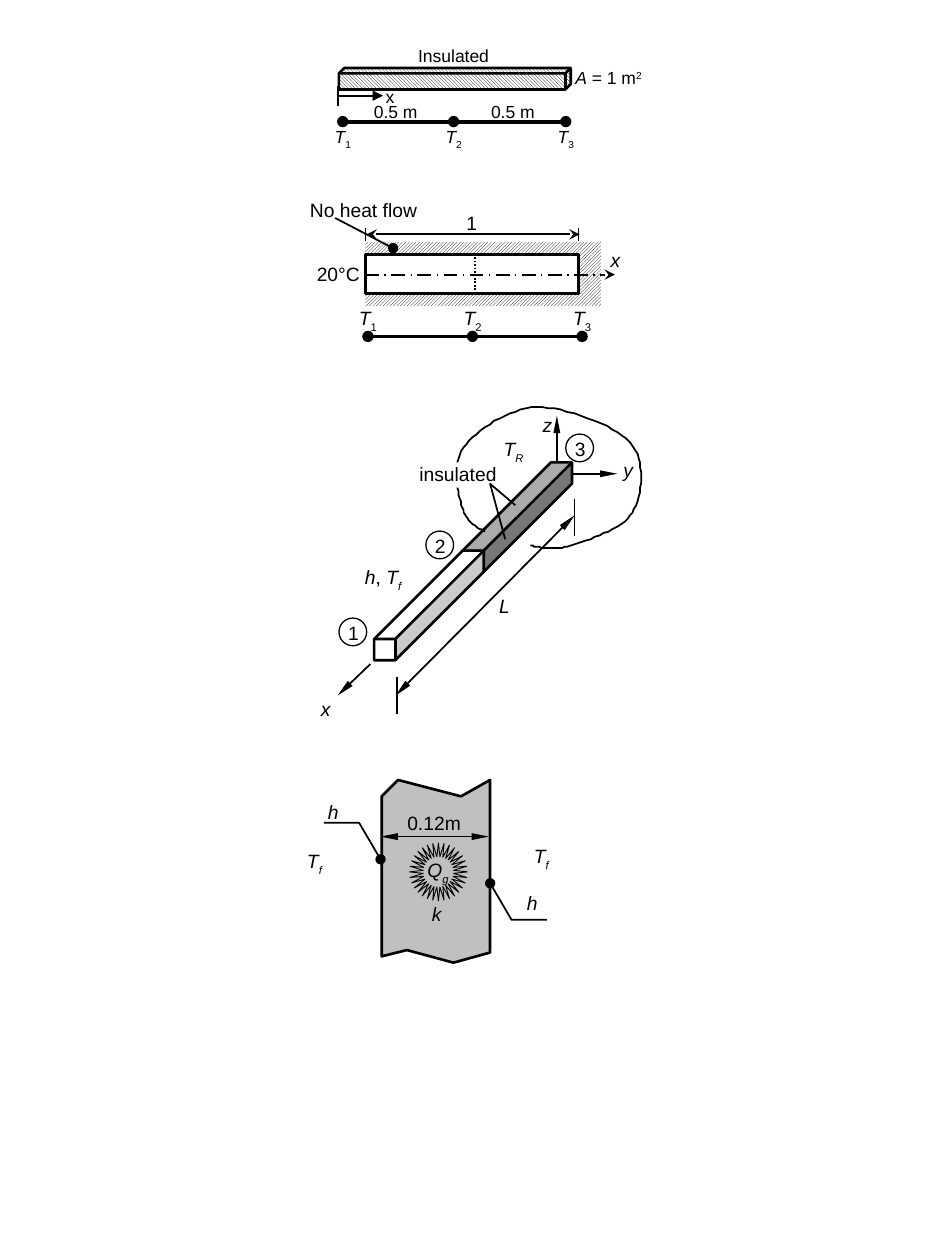
import dataclasses
import typing

import lxml.etree
import pptx
import pptx.dml.color
import pptx.enum.dml
import pptx.enum.shapes
import pptx.enum.text
import pptx.oxml.ns
import pptx.util

Color = pptx.dml.color.RGBColor
Kind = pptx.enum.shapes.MSO_SHAPE
Pattern = pptx.enum.dml.MSO_PATTERN
Dash = pptx.enum.dml.MSO_LINE
Canvas = typing.Any
Point = tuple[float, float]

COLUMNS, ROWS = 750, 1000
CELL = pptx.util.Inches(7.5) // COLUMNS


@dataclasses.dataclass(frozen=True)
class Theme:
    ink: Color = Color(0, 0, 0)
    paper: Color = Color(255, 255, 255)
    shade: Color = Color(0x96, 0x96, 0x96)
    wall: Color = Color(0xC0, 0xC0, 0xC0)
    font: str = "Arial"
    small: float = 10
    normal: float = 11
    fine: float = 0.75
    thin: float = 1
    bold: float = 1.5


THEME = Theme()


class Place(typing.NamedTuple):
    left: float
    top: float
    width: float
    height: float


class Span(typing.NamedTuple):
    text: str
    italic: bool = False
    baseline: int = 0


class Ends(typing.NamedTuple):
    head: str = ""
    tail: str = ""
    width: str = "med"
    length: str = "med"


SLIM = Ends(tail="triangle", width="sm", length="lg")
SLIM_BOTH = SLIM._replace(head="triangle")
STEALTH = Ends(tail="stealth")
DOT = Ends(tail="oval")


def cells(*values: float) -> list[int]:
    return [round(value * CELL) for value in values]


def symbol(letter: str, index: str, italic: bool = False) -> list[Span]:
    return [Span(letter, True), Span(index, italic, -30000)]


def write(canvas: Canvas, text: str | list[Span], place: Place, *,
          size: float = THEME.normal, italic: bool = False,
          fill: Color | None = None) -> None:
    box = canvas.add_textbox(*cells(*place))
    if fill is not None:
        box.fill.solid()
        box.fill.fore_color.rgb = fill
    frame = box.text_frame
    frame.word_wrap = True
    frame.vertical_anchor = pptx.enum.text.MSO_ANCHOR.TOP
    frame.margin_left = frame.margin_right = frame.margin_top = frame.margin_bottom = 0
    para = frame.paragraphs[0]
    para.alignment = pptx.enum.text.PP_ALIGN.CENTER
    for span in [Span(text, italic)] if isinstance(text, str) else text:
        run = para.add_run()
        run.text = span.text
        run.font.name, run.font.size = THEME.font, pptx.util.Pt(size)
        run.font.italic = span.italic
        run.font.color.rgb = THEME.ink
        if span.baseline:
            run.font._element.set("baseline", str(span.baseline))


def outline(item: typing.Any, weight: float, ends: Ends = Ends(), dash: typing.Any = None) -> None:
    item.line.color.rgb = THEME.ink
    item.line.width = pptx.util.Pt(weight)
    if dash is not None:
        item.line.dash_style = dash
    stroke = item._element.spPr.find(pptx.oxml.ns.qn("a:ln"))
    for tag, kind in (("a:headEnd", ends.head), ("a:tailEnd", ends.tail)):
        if kind:
            lxml.etree.SubElement(stroke, pptx.oxml.ns.qn(tag), type=kind, w=ends.width, len=ends.length)


def paint(item: typing.Any, fill: Color | None, weight: float, ends: Ends = Ends(),
          pattern: typing.Any = None) -> None:
    item.shadow.inherit = False
    if pattern is not None:
        item.fill.patterned()
        item.fill.pattern = pattern
        item.fill.fore_color.rgb, item.fill.back_color.rgb = THEME.ink, THEME.paper
    elif fill is not None:
        item.fill.solid()
        item.fill.fore_color.rgb = fill
    else:
        item.fill.background()
    if weight:
        outline(item, weight, ends)
    else:
        item.line.fill.background()


def draw_shape(canvas: Canvas, kind: typing.Any, place: Place, *, fill: Color | None = None,
               weight: float = THEME.bold, pattern: typing.Any = None,
               adjust: float | None = None) -> None:
    item = canvas.add_shape(kind, *cells(*place))
    if adjust is not None:
        item.adjustments[0] = adjust
    paint(item, fill, weight, pattern=pattern)


def draw_line(canvas: Canvas, start: Point, end: Point, *, weight: float = THEME.thin,
              ends: Ends = Ends(), dash: typing.Any = None) -> None:
    item = canvas.add_connector(pptx.enum.shapes.MSO_CONNECTOR.STRAIGHT, *cells(*start, *end))
    outline(item, weight, ends, dash)
    lxml.etree.SubElement(item._element.spPr, pptx.oxml.ns.qn("a:effectLst"))


def draw_path(canvas: Canvas, points: list[Point], *, fill: Color | None = None,
              weight: float = THEME.thin, ends: Ends = Ends(), close: bool = False) -> None:
    builder = canvas.build_freeform(*points[0], scale=CELL)
    builder.add_line_segments(points[1:], close=close)
    paint(builder.convert_to_shape(), fill, weight, ends)


def curve(knots: list[Point], steps: int = 16) -> list[Point]:
    points = [knots[0]]
    for first in range(0, len(knots) - 1, 3):
        for step in range(1, steps + 1):
            t = step / steps
            weights = ((1 - t) ** 3, 3 * t * (1 - t) ** 2, 3 * t * t * (1 - t), t ** 3)
            corners = knots[first:first + 4]
            points.append(tuple(sum(w * corner[axis] for w, corner in zip(weights, corners))
                                for axis in (0, 1)))
    return points


def draw_nodes(canvas: Canvas, centers: list[float], axis: float, label_top: float, *,
               size: float, weight: float) -> None:
    draw_line(canvas, (centers[0], axis), (centers[-1], axis), weight=weight)
    for number, center in enumerate(centers, 1):
        draw_shape(canvas, Kind.OVAL, Place(center - 4, axis - 4, 8, 8), fill=THEME.ink, weight=THEME.fine)
        write(canvas, symbol("T", str(number)), Place(center - 11, label_top, 22, 20), size=size)


def draw_insulated_bar(canvas: Canvas) -> None:
    draw_shape(canvas, Kind.CUBE, Place(269, 54, 184, 17), pattern=Pattern.DARK_DOWNWARD_DIAGONAL, adjust=0.25)
    area = [Span("A", True), Span(" = 1 m"), Span("2", baseline=30000)]
    for text, place in (("Insulated", Place(327, 36, 66, 18)), ("0.5 m", Place(292, 80, 44, 18)),
                        ("0.5 m", Place(385, 80, 44, 18)), ("x", Place(303, 68, 13, 18)),
                        (area, Place(455, 53, 56, 18))):
        write(canvas, text, place, size=THEME.small)
    draw_nodes(canvas, [272, 360, 449], 96.5, 100, size=THEME.small, weight=2.25)
    draw_line(canvas, (268, 68), (268, 84))
    draw_line(canvas, (268, 76), (304, 76), ends=Ends(tail="triangle"))


def draw_lagged_rod(canvas: Canvas) -> None:
    draw_shape(canvas, Kind.RECTANGLE, Place(290, 192, 187, 51), pattern=Pattern.DARK_UPWARD_DIAGONAL, weight=0)
    draw_shape(canvas, Kind.RECTANGLE, Place(290, 202, 169, 31), fill=THEME.paper)
    draw_line(canvas, (377, 233), (377, 203), dash=Dash.ROUND_DOT)
    write(canvas, "No heat flow", Place(244, 157, 89, 16))
    write(canvas, "20°C", Place(249, 208, 39, 16))
    write(canvas, "x", Place(479, 197, 19, 21), italic=True)
    write(canvas, "1", Place(365, 168, 19, 21))
    draw_line(canvas, (290, 218), (488, 218), ends=STEALTH, dash=Dash.LONG_DASH_DOT)
    draw_line(canvas, (266, 173), (312, 197), ends=DOT)
    draw_nodes(canvas, [292, 375, 462], 267, 243, size=THEME.normal, weight=2)
    draw_line(canvas, (291, 186), (460, 186), ends=STEALTH._replace(head="stealth"))
    for column in (290, 459):
        draw_line(canvas, (column, 181), (column, 191), weight=THEME.fine)


def draw_fin(canvas: Canvas) -> None:
    draw_shape(canvas, Kind.CUBE, Place(367, 367, 87, 87), fill=THEME.shade, adjust=0.807)
    draw_path(canvas, curve([
        (421, 433), (430, 435), (439, 437), (453, 433), (466, 429), (494, 420), (502, 407),
        (510, 393), (513, 365), (500, 351), (487, 337), (448, 323), (426, 323), (404, 324),
        (378, 342), (368, 355), (358, 369), (364, 392), (367, 403), (370, 414), (377, 418), (385, 422)]))
    for start, end in (((294, 527), (268, 552)), ((442, 366), (442, 330)), ((454, 376), (490, 376))):
        draw_line(canvas, start, end, ends=SLIM)
    film = [Span("h", True), Span(", "), *symbol("T", "f", True)]
    write(canvas, film, Place(281, 449, 46, 24))
    write(canvas, symbol("T", "R", True), Place(395, 347, 25, 22))
    for letter, left, top in (("x", 246, 553), ("L", 388, 472), ("y", 486, 364), ("z", 422, 328)):
        write(canvas, letter, Place(left, top, 25, 22), italic=True)
    draw_line(canvas, (456, 396), (456, 425))
    draw_line(canvas, (315, 537), (315, 567))
    draw_line(canvas, (456, 409), (314, 552), ends=SLIM_BOTH)
    draw_shape(canvas, Kind.CUBE, Place(297, 437, 87, 87), fill=THEME.paper, adjust=0.807)
    write(canvas, "insulated", Place(332, 367, 63, 20), fill=THEME.paper)
    draw_path(canvas, [(409, 401), (389, 384), (401, 428)])
    for number, (left, top) in enumerate(((268, 493), (337, 424), (448, 347)), 1):
        write(canvas, str(number), Place(left, top, 25, 22))
        draw_shape(canvas, Kind.OVAL, Place(left + 1, top - 2.5, 22, 22), weight=THEME.fine)


def draw_wall(canvas: Canvas) -> None:
    draw_path(canvas, [(303, 632), (303, 759), (323, 754), (360, 764), (389, 756), (389, 619),
                       (366, 632), (316, 619)], fill=THEME.wall, weight=THEME.bold, close=True)
    draw_line(canvas, (302, 664), (388, 664), ends=SLIM_BOTH)
    write(canvas, "0.12m", Place(322, 644, 45, 19))
    for text, left, top in ((symbol("T", "f", True), 417, 670), (symbol("T", "f", True), 237, 674),
                            ("k", 334, 716), (symbol("Q", "g", True), 335, 681),
                            ("h", 252, 635), ("h", 410, 707)):
        write(canvas, text, Place(left, top, 25, 22), italic=True)
    draw_shape(canvas, Kind.STAR_32_POINT, Place(325, 669, 46, 46), weight=0.5, adjust=0.264)
    for column, row, toward in ((302, 682, -1), (389, 701, 1)):
        shelf = row + 29 * toward
        draw_path(canvas, [(column + 45 * toward, shelf), (column + 17 * toward, shelf), (column, row)], ends=DOT)


def main() -> None:
    deck = pptx.Presentation()
    deck.slide_width, deck.slide_height = cells(COLUMNS, ROWS)
    page = deck.slides.add_slide(deck.slide_layouts[6])
    for draw_figure in (draw_insulated_bar, draw_lagged_rod, draw_fin, draw_wall):
        draw_figure(page.shapes.add_group_shape().shapes)
    deck.save("out.pptx")


if __name__ == "__main__":
    main()
